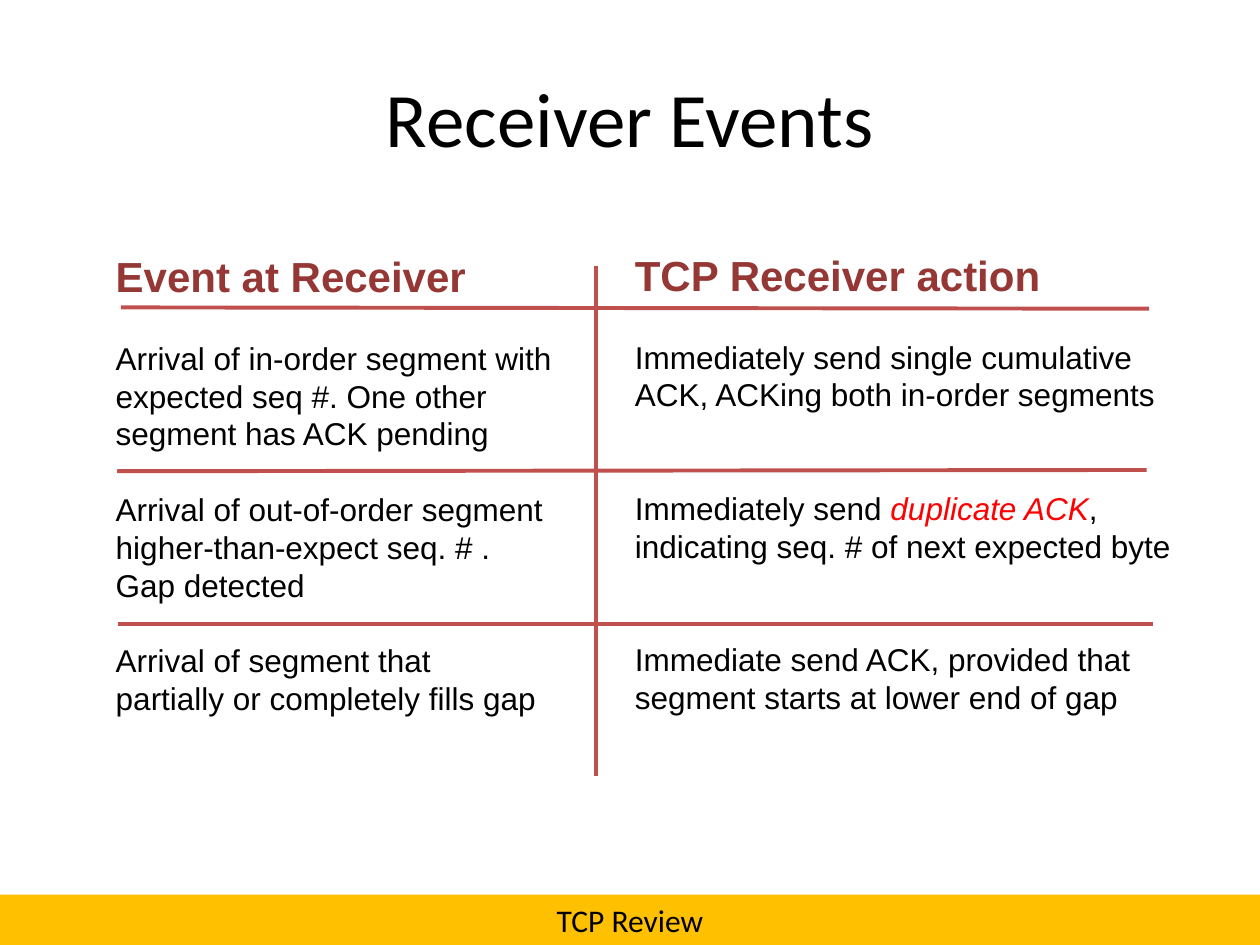
"""Build the Receiver Events slide."""
from pptx import Presentation
from pptx.dml.color import RGBColor
from pptx.enum.shapes import MSO_CONNECTOR, MSO_SHAPE
from pptx.enum.text import MSO_ANCHOR, PP_ALIGN
from pptx.oxml.ns import qn
from pptx.util import Inches, Pt

BLACK = RGBColor(0x00, 0x00, 0x00)
RED = RGBColor(0xFF, 0x00, 0x00)
MAROON = RGBColor(0x95, 0x37, 0x35)
BRICK = RGBColor(0xC0, 0x50, 0x4D)
GOLD = RGBColor(0xFF, 0xC0, 0x00)

BODY = 18
LEADING = 1.2

EVENTS = [
    ["Arrival of in-order segment with", "expected seq #. One other",
     "segment has ACK pending"],
    ["Arrival of out-of-order segment", "higher-than-expect seq. # .",
     "Gap detected"],
    ["Arrival of segment that", "partially or completely fills gap"],
]
ACTIONS = [
    ["Immediately send single cumulative",
     "ACK, ACKing both in-order segments"],
    ["Immediately send *duplicate ACK*,",
     "indicating seq. # of next expected byte"],
    ["Immediate send ACK, provided that",
     "segment starts at lower end of gap"],
]
RULES = [
    (0.96, 2.44, 9.12, 2.45),
    (0.93, 3.74, 9.1, 3.73),
    (0.94, 4.95, 9.15, 4.95),
    (4.73, 2.11, 4.73, 6.16),
]


def write(para, text, size=BODY, font="Arial", color=BLACK, bold=False,
          align=PP_ALIGN.LEFT):
    """Fill a paragraph, setting each part between asterisks in red italics."""
    para.alignment = align
    for index, part in enumerate(text.split("*")):
        stress = index % 2 == 1
        run = para.add_run()
        run.text = part
        run.font.name = font
        run.font.size = Pt(size)
        run.font.bold = bold
        run.font.italic = stress
        run.font.color.rgb = RED if stress else color


def add_box(slide, left, top, width, height):
    """Add a wrapping text box and return its text frame."""
    frame = slide.shapes.add_textbox(
        Inches(left), Inches(top), Inches(width), Inches(height)).text_frame
    frame.word_wrap = True
    return frame


def add_title(slide, text):
    """Add the centred slide title."""
    frame = add_box(slide, 0.5, 0.3, 9, 1.25)
    frame.vertical_anchor = MSO_ANCHOR.MIDDLE
    write(frame.paragraphs[0], text, size=44, font="Calibri",
          align=PP_ALIGN.CENTER)


def add_column(slide, left, top, width, head, cells):
    """Add a heading and its cells, padded so that rows take four lines."""
    frame = add_box(slide, left, top, width, 4.31)
    para = frame.paragraphs[0]
    para.line_spacing = Pt(24 * LEADING)
    write(para, head, size=24, color=MAROON, bold=True)
    pitch = BODY * LEADING
    gap = 1
    for lines in cells:
        for index, line in enumerate(lines):
            para = frame.add_paragraph()
            para.line_spacing = Pt(pitch)
            para.space_before = Pt(0 if index else gap * pitch)
            write(para, line)
        gap = 4 - len(lines)


def add_rule(slide, x1, y1, x2, y2):
    """Add a brick-coloured grid line."""
    rule = slide.shapes.add_connector(
        MSO_CONNECTOR.STRAIGHT, Inches(x1), Inches(y1), Inches(x2), Inches(y2))
    rule.line.color.rgb = BRICK
    rule.line.width = Pt(2.25)
    props = rule.element.spPr
    props.append(props.makeelement(qn("a:effectLst"), {}))


def add_footer(slide, text):
    """Add the gold band along the bottom edge."""
    band = slide.shapes.add_shape(
        MSO_SHAPE.RECTANGLE, Inches(0), Inches(7.1), Inches(10), Inches(0.4))
    band.shadow.inherit = False
    band.fill.solid()
    band.fill.fore_color.rgb = GOLD
    band.line.fill.background()
    write(band.text_frame.paragraphs[0], text, font="Calibri",
          align=PP_ALIGN.CENTER)


def main():
    """Build and save the deck."""
    deck = Presentation()
    deck.slide_width = Inches(10)
    deck.slide_height = Inches(7.5)
    slide = deck.slides.add_slide(deck.slide_layouts[6])
    add_title(slide, "Receiver Events")
    add_column(slide, 0.82, 1.94, 3.69, "Event at Receiver", EVENTS)
    add_column(slide, 4.94, 1.93, 4.49, "TCP Receiver action", ACTIONS)
    for ends in RULES:
        add_rule(slide, *ends)
    add_footer(slide, "TCP Review")
    deck.save("out.pptx")


if __name__ == "__main__":
    main()
